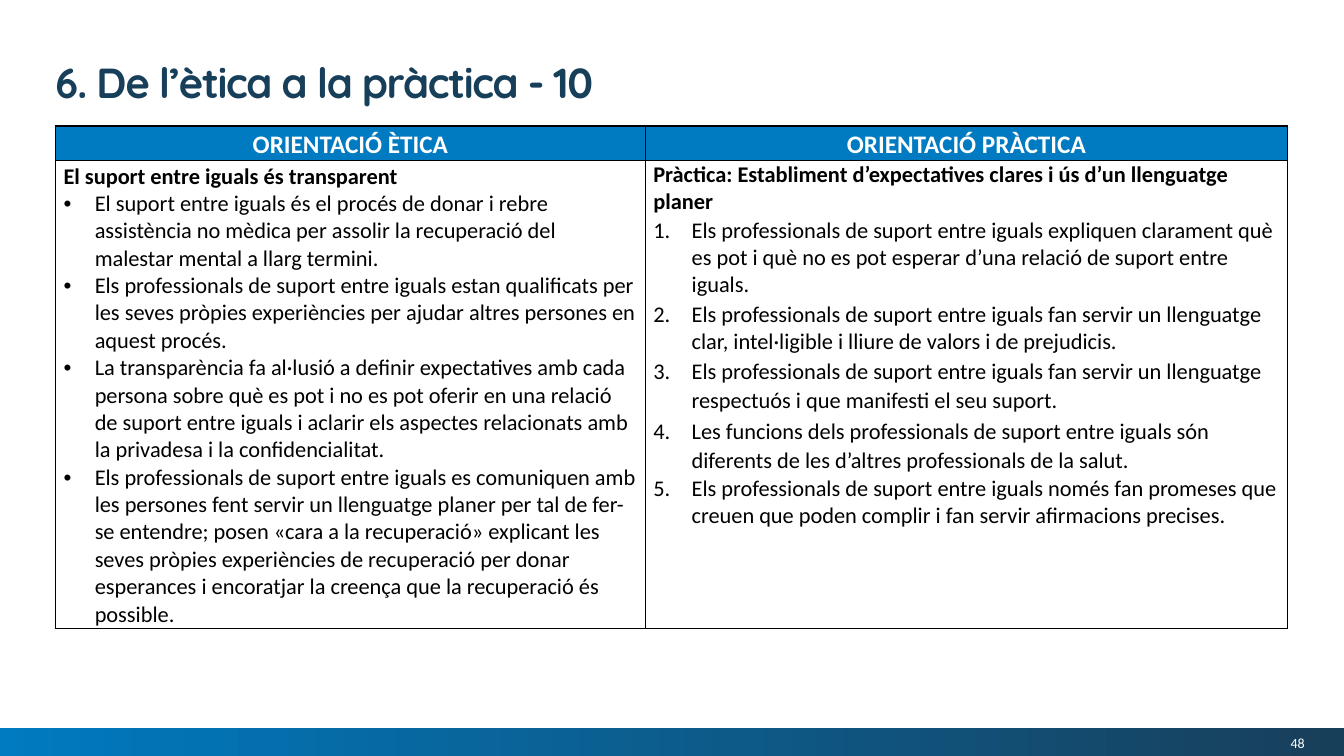
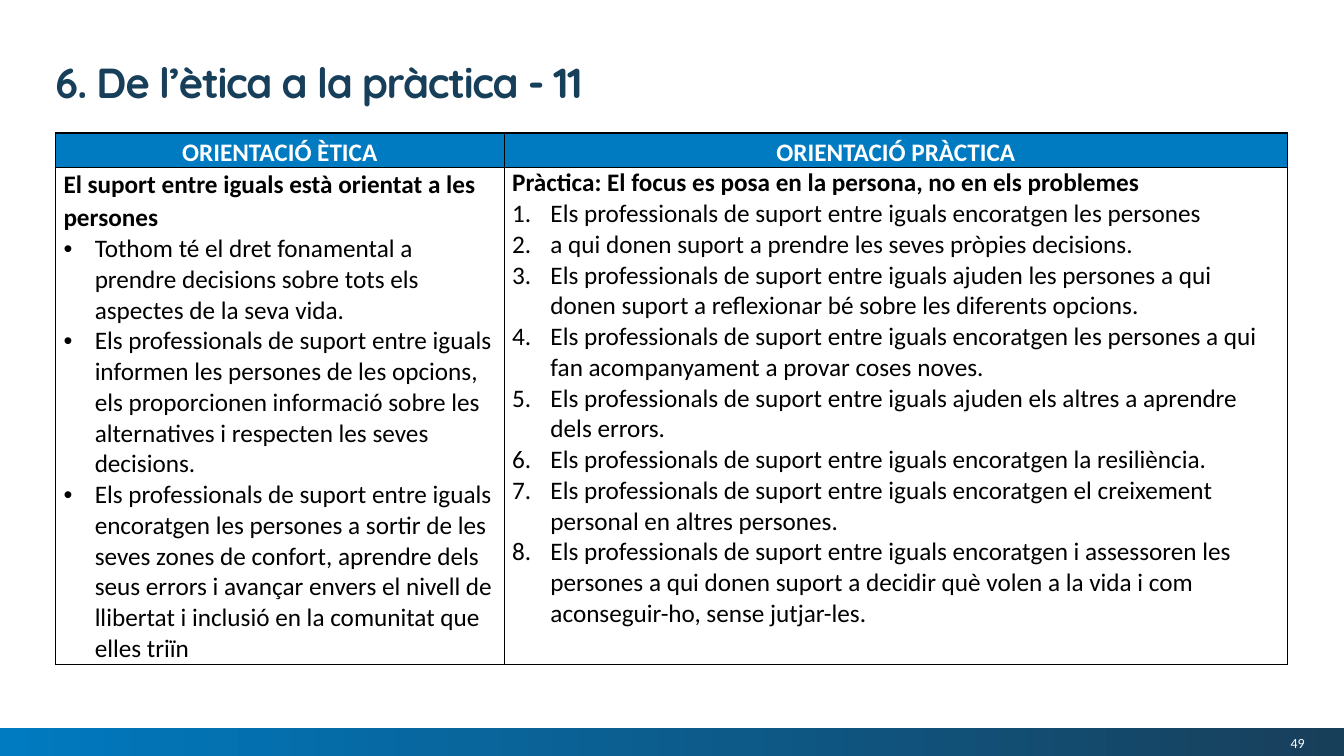
from lxml.etree import SubElement
from pptx import Presentation
from pptx.dml.color import RGBColor
from pptx.enum.shapes import MSO_SHAPE
from pptx.enum.text import MSO_ANCHOR, MSO_AUTO_SIZE, PP_ALIGN
from pptx.oxml.ns import qn
from pptx.util import Inches, Pt

# Shared look
COLORS = {"blue": "007AC0", "navy": "183F5A", "white": "FFFFFF", "black": "000000"}
TITLE_FONT, BODY_FONT = "Quicksand", "Calibri"
PAGE_WIDTH, PAGE_HEIGHT = Inches(13.33), Inches(7.5)
TITLE_BOX = (Inches(0.45), Inches(0.55), Inches(10.71), Inches(0.47))
BAND_HEIGHT = Inches(0.28)
TABLE_LEFT, TABLE_WIDTH = Inches(0.55), Inches(12.22)
HEADER_HEIGHT = Inches(0.34)
HEADINGS = ("ORIENTACIÓ ÈTICA", "ORIENTACIÓ PRÀCTICA")
BULLET, NUMBER = "bullet", "number"
INDENTS = {BULLET: Inches(0.31), NUMBER: Inches(0.38)}

# Each column has a heading, its items, and (line spacing, points after) per paragraph
SLIDES = [
    {
        "number": 48,
        "title": "6. De l’ètica a la pràctica - 10",
        "top": 1.25, "body_height": 4.63, "ethics_share": 5.85 / 12.22, "size": 16,
        "ethics": (
            "El suport entre iguals és transparent",
            [
                "El suport entre iguals és el procés de donar i rebre assistència no mèdica per assolir la recuperació del malestar mental a llarg termini.",
                "Els professionals de suport entre iguals estan qualificats per les seves pròpies experiències per ajudar altres persones en aquest procés.",
                "La transparència fa al·lusió a definir expectatives amb cada persona sobre què es pot i no es pot oferir en una relació de suport entre iguals i aclarir els aspectes relacionats amb la privadesa i la confidencialitat.",
                "Els professionals de suport entre iguals es comuniquen amb les persones fent servir un llenguatge planer per tal de fer-se entendre; posen «cara a la recuperació» explicant les seves pròpies experiències de recuperació per donar esperances i encoratjar la creença que la recuperació és possible.",
            ],
            [(1.07, 0)],
        ),
        "practice": (
            "Pràctica: Establiment d’expectatives clares i ús d’un llenguatge planer",
            [
                "Els professionals de suport entre iguals expliquen clarament què es pot i què no es pot esperar d’una relació de suport entre iguals.",
                "Els professionals de suport entre iguals fan servir un llenguatge clar, intel·ligible i lliure de valors i de prejudicis.",
                "Els professionals de suport entre iguals fan servir un llenguatge respectuós i que manifesti el seu suport.",
                "Les funcions dels professionals de suport entre iguals són diferents de les d’altres professionals de la salut.",
                "Els professionals de suport entre iguals només fan promeses que creuen que poden complir i fan servir afirmacions precises.",
            ],
            [(0.99, 1.7), (0.99, 1.7), (0.99, 1.8), (1.03, 1.6), (1.07, 0), (0.99, 0)],
        ),
    },
    {
        "number": 49,
        "title": "6. De l’ètica a la pràctica - 11",
        "top": 1.32, "body_height": 4.93, "ethics_share": 4.45 / 12.22, "size": 18,
        "ethics": (
            "El suport entre iguals està orientat a les persones",
            [
                "Tothom té el dret fonamental a prendre decisions sobre tots els aspectes de la seva vida.",
                "Els professionals de suport entre iguals informen les persones de les opcions, els proporcionen informació sobre les alternatives i respecten les seves decisions.",
                "Els professionals de suport entre iguals encoratgen les persones a sortir de les seves zones de confort, aprendre dels seus errors i avançar envers el nivell de llibertat i inclusió en la comunitat que elles triïn",
            ],
            [(1.07, 0)],
        ),
        "practice": (
            "Pràctica: El focus es posa en la persona, no en els problemes",
            [
                "Els professionals de suport entre iguals encoratgen les persones",
                "a qui donen suport a prendre les seves pròpies decisions.",
                "Els professionals de suport entre iguals ajuden les persones a qui donen suport a reflexionar bé sobre les diferents opcions.",
                "Els professionals de suport entre iguals encoratgen les persones a qui fan acompanyament a provar coses noves.",
                "Els professionals de suport entre iguals ajuden els altres a aprendre dels errors.",
                "Els professionals de suport entre iguals encoratgen la resiliència.",
                "Els professionals de suport entre iguals encoratgen el creixement personal en altres persones.",
                "Els professionals de suport entre iguals encoratgen i assessoren les persones a qui donen suport a decidir què volen a la vida i com aconseguir-ho, sense jutjar-les.",
            ],
            [],
        ),
    },
]


def color(name):
    return RGBColor.from_string(COLORS[name])


def style_runs(para, size, color_name, bold=False, font=BODY_FONT):
    for span in para.runs:
        span.font.name = font
        span.font.size = Pt(size)
        span.font.bold = bold
        span.font.color.rgb = color(color_name)


def set_list_marker(para, marker):
    properties = para._p.get_or_add_pPr()
    indent = INDENTS[marker]
    properties.set("marL", str(indent))
    properties.set("indent", str(-indent))
    if marker == BULLET:
        SubElement(properties, qn("a:buFont"), typeface="Arial")
        SubElement(properties, qn("a:buChar"), char="•")
    else:
        SubElement(properties, qn("a:buFont"), typeface="+mj-lt")
        SubElement(properties, qn("a:buAutoNum"), type="arabicPeriod")


# Title and bottom band
def prepare_layout(layout, first_page):
    title = layout.placeholders[0]
    title.left, title.top, title.width, title.height = TITLE_BOX
    band = first_page.shapes.add_shape(
        MSO_SHAPE.RECTANGLE, 0, PAGE_HEIGHT - BAND_HEIGHT, PAGE_WIDTH, BAND_HEIGHT)
    band.shadow.inherit = False
    band.line.fill.background()
    band.fill.gradient()
    band.fill.gradient_angle = 0
    for stop, position, name in zip(band.fill.gradient_stops, (0, 1), ("blue", "navy")):
        stop.position = position
        stop.color.rgb = color(name)
    layout.shapes.element.insert(2, band.element)


def write_title(page, text):
    frame = page.shapes.title.text_frame
    frame.text = text
    frame.auto_size = MSO_AUTO_SIZE.NONE
    frame.vertical_anchor = MSO_ANCHOR.TOP
    para = frame.paragraphs[0]
    para.alignment = PP_ALIGN.LEFT
    para.line_spacing = Pt(33)
    style_runs(para, 30, "navy", True, TITLE_FONT)
    para.runs[0].font._element.set("spc", "-100")


def add_page_number(page, number):
    box = page.shapes.add_textbox(Inches(11.14), Inches(7.25), Inches(1.8), Inches(0.24))
    frame = box.text_frame
    frame.word_wrap = True
    frame.margin_left = frame.margin_top = frame.margin_right = frame.margin_bottom = 0
    frame.vertical_anchor = MSO_ANCHOR.MIDDLE
    frame.text = str(number)
    frame.paragraphs[0].alignment = PP_ALIGN.RIGHT
    style_runs(frame.paragraphs[0], 10, "white")


# Table
def format_cell(cell):
    cell.margin_left = cell.margin_right = Inches(0.08)
    cell.margin_top = cell.margin_bottom = 0
    properties = cell._tc.get_or_add_tcPr()
    for side in ("lnL", "lnR", "lnT", "lnB"):
        border = SubElement(properties, qn(f"a:{side}"), w=str(Pt(1)))
        fill = SubElement(border, qn("a:solidFill"))
        SubElement(fill, qn("a:srgbClr"), val=COLORS["black"])


def fill_header(cell, text):
    format_cell(cell)
    cell.fill.solid()
    cell.fill.fore_color.rgb = color("blue")
    cell.text_frame.text = text
    para = cell.text_frame.paragraphs[0]
    para.alignment = PP_ALIGN.CENTER
    para.line_spacing = 1.13
    para.space_after = Pt(9)
    style_runs(para, 18, "white", True)


def fill_body(cell, column, marker, size):
    heading, items, spacings = column
    format_cell(cell)
    cell.fill.background()
    frame = cell.text_frame
    frame.text = "\n".join([heading, *items])
    for index, para in enumerate(frame.paragraphs):
        if index:
            set_list_marker(para, marker)
        line_spacing, after = spacings[index] if index < len(spacings) else (1.0, 0)
        para.line_spacing = line_spacing
        para.space_after = Pt(after)
        style_runs(para, size, "black", bold=index == 0)


def add_guidance_table(page, content):
    body_height = Inches(content["body_height"])
    table = page.shapes.add_table(
        2, 2, TABLE_LEFT, Inches(content["top"]), TABLE_WIDTH,
        HEADER_HEIGHT + body_height).table
    table.first_row = table.horz_banding = False
    ethics_width = round(TABLE_WIDTH * content["ethics_share"])
    table.columns[0].width = ethics_width
    table.columns[1].width = TABLE_WIDTH - ethics_width
    table.rows[0].height = HEADER_HEIGHT
    table.rows[1].height = body_height
    columns = (("ethics", BULLET), ("practice", NUMBER))
    for index, (key, marker) in enumerate(columns):
        fill_header(table.cell(0, index), HEADINGS[index])
        fill_body(table.cell(1, index), content[key], marker, content["size"])


def main():
    deck = Presentation()
    deck.slide_width, deck.slide_height = PAGE_WIDTH, PAGE_HEIGHT
    layout = deck.slide_layouts.get_by_name("Title Only")
    pages = [deck.slides.add_slide(layout) for _ in SLIDES]
    prepare_layout(layout, pages[0])
    for page, content in zip(pages, SLIDES):
        write_title(page, content["title"])
        add_guidance_table(page, content)
        add_page_number(page, content["number"])
    deck.save("out.pptx")


if __name__ == "__main__":
    main()
